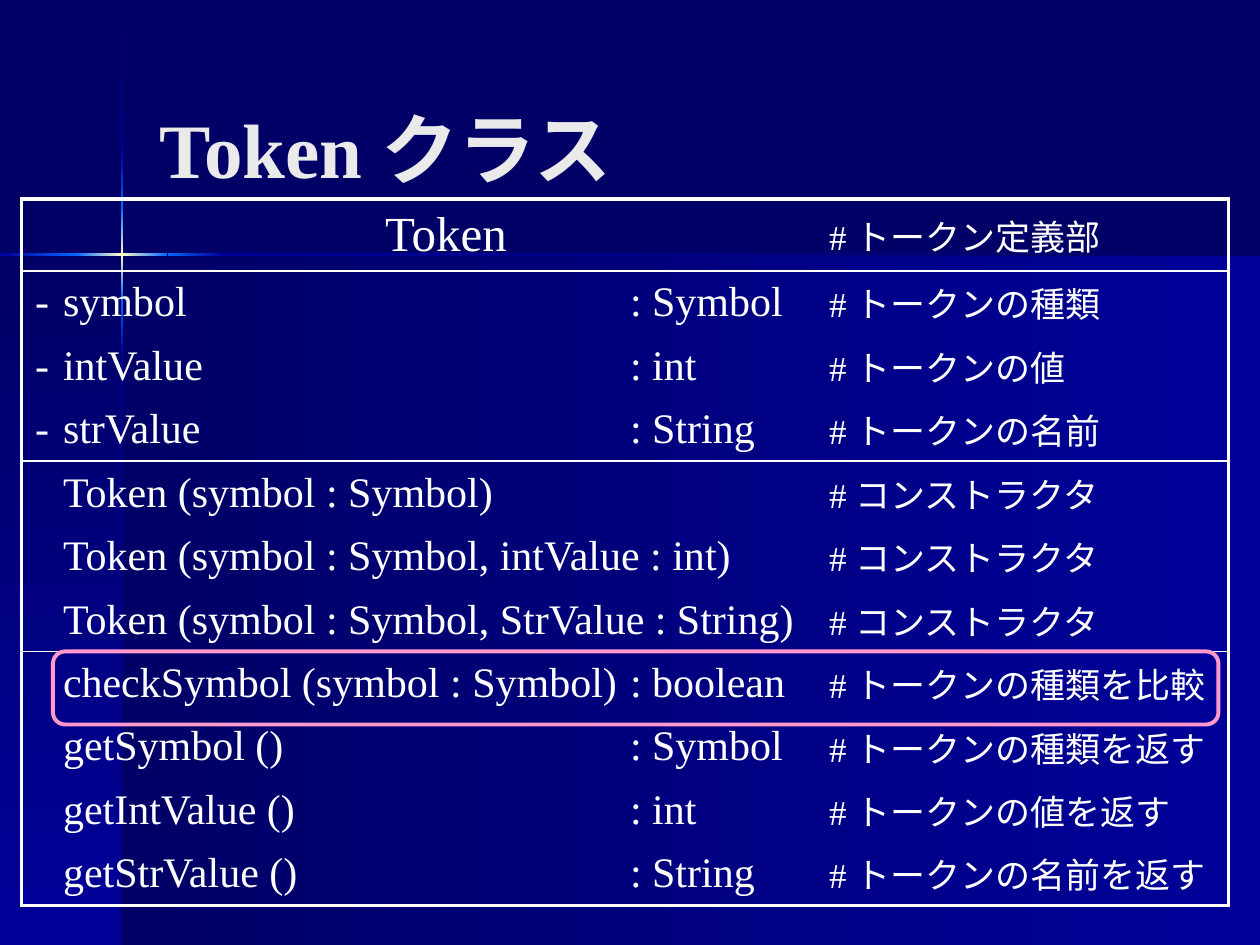
from copy import deepcopy
from typing import NamedTuple

from lxml.etree import SubElement
from pptx import Presentation
from pptx.dml.color import RGBColor
from pptx.enum.shapes import MSO_SHAPE as Shape
from pptx.enum.text import MSO_ANCHOR as Anchor, PP_ALIGN as Align
from pptx.oxml.ns import qn
from pptx.util import Inches, Pt

FONT = "Times New Roman"
NAVY = RGBColor(0x00, 0x00, 0x66)
BLUE = RGBColor(0x00, 0x00, 0x99)
BRIGHT = RGBColor(0x00, 0x66, 0xFF)
CREAM = RGBColor(0xFF, 0xFF, 0xCC)
WHITE = RGBColor(0xFF, 0xFF, 0xFF)
PALE = RGBColor(0xEA, 0xEA, 0xEA)
PINK = RGBColor(0xFF, 0x99, 0xCC)
NO_STYLE = "{2D5ABB26-0587-4C30-8999-92F81FD0307C}"


class Band(NamedTuple):
    x: float
    y: float
    w: float
    h: float
    colors: tuple
    vertical: bool = False


class Member(NamedTuple):
    mark: str
    name: str
    kind: str
    note: str


FLARE = (BRIGHT, CREAM, BRIGHT)
BANDS = [
    Band(0.97, 2.02, 9.03, 5.48, (NAVY, BLUE)),
    Band(0, 2.02, 0.97, 5.48, (NAVY, BLUE), True),
    Band(0.96, 1.65, 0.02, 0.73, FLARE, True),
    Band(1.33, 2.01, 0.44, 0.02, (BRIGHT, BLUE)),
    Band(0, 2.01, 0.61, 0.02, (BLUE, BRIGHT)),
    Band(0.96, 0.01, 0.02, 1.2, (NAVY, BLUE), True),
    Band(0.96, 2.82, 0.02, 4.68, (BLUE, NAVY), True),
    Band(1.77, 2.01, 8.23, 0.02, (BLUE, NAVY)),
    Band(0.96, 2.38, 0.02, 0.44, (BRIGHT, BLUE), True),
    Band(0.96, 1.21, 0.02, 0.44, (BLUE, BRIGHT), True),
    Band(0.6, 2.01, 0.73, 0.02, FLARE),
]

COLS = [0.33, 4.5, 1.58, 3.17]
HEADER_HEIGHT, ROW_HEIGHT = 0.57, 0.5
MEMBERS = [
    Member("", "Token", "", "# トークン定義部"),
    Member("-", "symbol", ": Symbol", "# トークンの種類"),
    Member("-", "intValue", ": int", "# トークンの値"),
    Member("-", "strValue", ": String", "# トークンの名前"),
    Member("", "Token (symbol : Symbol)", "", "# コンストラクタ"),
    Member("", "Token (symbol : Symbol, intValue : int)", "", "# コンストラクタ"),
    Member("", "Token (symbol : Symbol, StrValue : String)", "", "# コンストラクタ"),
    Member("", "checkSymbol (symbol : Symbol)", ": boolean", "# トークンの種類を比較"),
    Member("", "getSymbol ()", ": Symbol", "# トークンの種類を返す"),
    Member("", "getIntValue ()", ": int", "# トークンの値を返す"),
    Member("", "getStrValue ()", ": String", "# トークンの名前を返す"),
]
SECTION_ENDS = {0, 3, 6}


def write(tf, text: str, *, size: float, color=WHITE, bold=False, align=Align.LEFT) -> None:
    p = tf.paragraphs[0]
    p.alignment = align
    r = p.add_run()
    r.text = text
    r.font.name, r.font.size, r.font.bold = FONT, Pt(size), bold
    r.font.color.rgb = color


def draw_band(s, band: Band) -> None:
    sp = s.shapes.add_shape(Shape.RECTANGLE, *map(Inches, band[:4]))
    sp.shadow.inherit = False
    sp.line.fill.background()
    sp.fill.gradient()
    sp.fill.gradient_angle = 270 if band.vertical else 0
    stops = sp._element.spPr.find(qn("a:gradFill")).find(qn("a:gsLst"))
    while len(stops) < len(band.colors):
        stops.append(deepcopy(stops[-1]))
    for i, (gs, color) in enumerate(zip(stops, band.colors)):
        for child in list(gs):
            gs.remove(child)
        gs.set("pos", str(100000 * i // (len(band.colors) - 1)))
        SubElement(gs, qn("a:srgbClr"), val=str(color))


def set_borders(cell, **widths: float) -> None:
    """Draw white sides of the given point widths; a zero width hides the side."""
    tc_pr = cell._tc.get_or_add_tcPr()
    for side in ("L", "R", "T", "B"):
        width = widths.get(side, 0)
        ln = SubElement(tc_pr, qn(f"a:ln{side}"), w=str(Pt(width)))
        if width:
            fill = SubElement(ln, qn("a:solidFill"))
            SubElement(fill, qn("a:srgbClr"), val=str(WHITE))
        else:
            SubElement(ln, qn("a:noFill"))


def edge_width(row: int) -> float:
    """Width of the rule below a row; row -1 stands for the top edge."""
    if row in (-1, len(MEMBERS) - 1):
        return 2.25
    return 1 if row in SECTION_ENDS else 0


def draw_class_table(s) -> None:
    heights = [HEADER_HEIGHT] + [ROW_HEIGHT] * (len(MEMBERS) - 1)
    frame = s.shapes.add_table(len(heights), len(COLS), Inches(0.17), Inches(1.58),
                               Inches(sum(COLS)), Inches(sum(heights)))
    table = frame.table
    table._tbl.tblPr.find(qn("a:tableStyleId")).text = NO_STYLE
    table.first_row = table.horz_banding = False
    for col, width in zip(table.columns, COLS):
        col.width = Inches(width)
    for i, (member, height) in enumerate(zip(MEMBERS, heights)):
        table.rows[i].height = Inches(height)
        for j, text in enumerate(member):
            cell = table.cell(i, j)
            set_borders(cell, L=2.25 * (j == 0), R=2.25 * (j == len(COLS) - 1),
                        T=edge_width(i - 1), B=edge_width(i))
            cell.fill.background()
            cell.vertical_anchor = Anchor.MIDDLE
            if j:
                cell.margin_left = cell.margin_right = 0
            if text:
                is_title = i == 0 and j == 1
                write(cell.text_frame, text,
                      size=20 if j == 3 else 28 if is_title else 24,
                      align=Align.CENTER if is_title or j == 0 else Align.LEFT)
        if not member.kind:
            table.cell(i, 1).merge(table.cell(i, 2))


def draw_title(s) -> None:
    tf = s.shapes.add_textbox(Inches(1.17), Inches(0.02), Inches(7.75), Inches(1.57)).text_frame
    tf.word_wrap = True
    tf.vertical_anchor = Anchor.BOTTOM
    write(tf, "Token クラス", size=44, color=PALE, bold=True)


def draw_highlight(s) -> None:
    sp = s.shapes.add_shape(Shape.ROUNDED_RECTANGLE, Inches(0.42), Inches(5.17),
                            Inches(9.25), Inches(0.58))
    sp.shadow.inherit = False
    sp.fill.background()
    sp.line.color.rgb = PINK
    sp.line.width = Pt(2.25)


def main() -> None:
    prs = Presentation()
    prs.slide_width, prs.slide_height = Inches(10), Inches(7.5)
    s = prs.slides.add_slide(prs.slide_layouts[6])
    s.background.fill.solid()
    s.background.fill.fore_color.rgb = NAVY
    for band in BANDS:
        draw_band(s, band)
    draw_class_table(s)
    draw_title(s)
    draw_highlight(s)
    prs.save("out.pptx")


if __name__ == "__main__":
    main()
